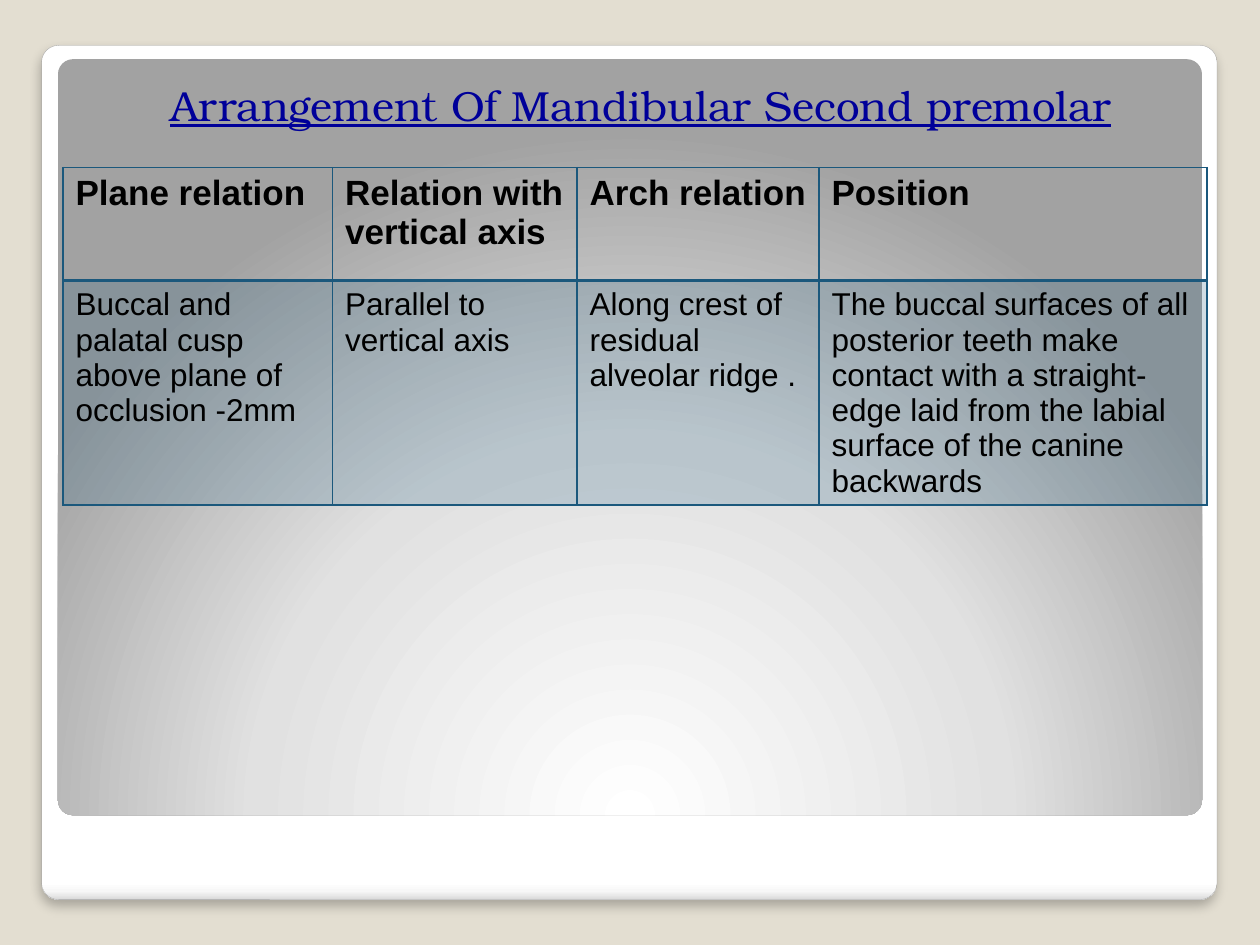
from dataclasses import dataclass

from lxml import etree
from pptx import Presentation
from pptx import util as u
from pptx.dml.color import RGBColor
from pptx.enum import shapes, text
from pptx.oxml.ns import nsdecls


@dataclass(frozen=True)
class Theme:
    backdrop: str = "E3DED1"
    outline: str = "A4A4A4"
    shadow: str = "000000"
    title: str = "000099"
    ink: str = "000000"
    accent: str = "1B587C"
    card: tuple = ((0, "FFFFFF"), (98, "FFFFFF"), (99, "F7F7F7"), (100, "DADADA"))
    panel: tuple = ((0, "FFFFFF"), (55, "E1E1E1"), (100, "A2A2A2"))
    title_font: str = "TeX Gyre Bonum"
    body_font: str = "Arial"
    title_size: int = 24
    head_size: int = 20
    body_size: int = 18


T = Theme()
WIDTH, HEIGHT = u.Inches(10), u.Inches(7.5)

# Boxes: left, top, width, height in percent of the slide
CARD = (3.3, 4.8, 93.3, 90.4)
PANEL = (4.6, 6.27, 90.8, 80)
TITLE = (6.7, -2.27, 88.3, 16.67)
TABLE = (5, 17.73, 90.8, 33.33)

# Shares of the table's width and height, in percent
COLUMNS = (23.57, 21.37, 21.15, 33.92)
ROWS = (36, 40.4)
CELLS = (
    ("Plane relation", "Relation with vertical axis", "Arch relation", "Position"),
    ("Buccal and palatal cusp above plane of occlusion -2mm",
     "Parallel to vertical axis",
     "Along crest of residual alveolar ridge .",
     "The buccal surfaces of all posterior teeth make contact with a "
     "straight-edge laid from the labial surface of the canine backwards"),
)

LINEAR = '<a:lin ang="5400000" scaled="0"/>'
RADIAL = ('<a:path path="circle"><a:fillToRect l="50000" t="175000" '
          'r="50000" b="-75000"/></a:path>')


def place(box):
    return [int(size * share / 100)
            for size, share in zip((WIDTH, HEIGHT) * 2, box)]


def xml(tag, content, attrs=""):
    return etree.fromstring(f'<a:{tag} {nsdecls("a")} {attrs}>{content}</a:{tag}>')


def style(run, font, size, color):
    run.font.name, run.font.size = font, u.Pt(size)
    run.font.color.rgb = RGBColor.from_string(color)


def add_rounded(s, box, stops, direction):
    sp = s.shapes.add_shape(shapes.MSO_SHAPE.ROUNDED_RECTANGLE, *place(box))
    sp.adjustments[0] = 0.02
    sp.shadow.inherit = False
    sp.line.fill.background()
    colors = "".join(f'<a:gs pos="{pos * 1000}"><a:srgbClr val="{c}"/></a:gs>'
                     for pos, c in stops)
    fill = xml("gradFill", f"<a:gsLst>{colors}</a:gsLst>{direction}",
               'rotWithShape="1"')
    sp.element.spPr.insert(2, fill)  # after position and geometry
    return sp


def add_card(s, box):
    sp = add_rounded(s, box, T.card, LINEAR)
    sp.line.color.rgb = RGBColor.from_string(T.outline)
    sp.line.width = u.Pt(0.16)
    effects = sp.element.spPr[-1]
    effects.append(xml(
        "outerShdw",
        f'<a:srgbClr val="{T.shadow}"><a:alpha val="25000"/></a:srgbClr>',
        f'blurRad="{u.Pt(6)}" dist="{u.Pt(4)}" dir="5400000" rotWithShape="0"'))


def add_title(s, box):
    tf = s.shapes.add_textbox(*place(box)).text_frame
    tf.word_wrap = True
    tf.vertical_anchor = text.MSO_ANCHOR.BOTTOM
    p = tf.paragraphs[0]
    p.text = "Arrangement Of Mandibular Second premolar"
    p.alignment = text.PP_ALIGN.CENTER
    r = p.runs[0]
    style(r, T.title_font, T.title_size, T.title)
    r.font.underline = True


def style_cell(cell, is_head):
    r = cell.text_frame.paragraphs[0].runs[0]
    style(r, T.body_font, T.head_size if is_head else T.body_size, T.ink)
    r.font.bold = is_head

    # Fill: none for the header, a light tint for the body
    if is_head:
        cell.fill.background()
    else:
        cell.fill.solid()
        cell.fill.fore_color.rgb = RGBColor.from_string(T.accent)
    tc_pr = cell._tc.get_or_add_tcPr()
    if not is_head:
        tc_pr[0][0].append(xml("alpha", "", 'val="20000"'))

    # Borders: a double-weight rule between header and body
    heavy = "lnB" if is_head else "lnT"
    for i, side in enumerate(("lnL", "lnR", "lnT", "lnB")):
        width = u.Pt(2 if side == heavy else 1)
        tc_pr.insert(i, xml(
            side, f'<a:solidFill><a:srgbClr val="{T.accent}"/></a:solidFill>',
            f'w="{width}"'))


def add_relations(s, box):
    x, y, w, h = place(box)
    frame = s.shapes.add_table(len(ROWS), len(COLUMNS), x, y, w, h)
    table = frame.table
    table.first_row = table.horz_banding = False
    for column, share in zip(table.columns, COLUMNS):
        column.width = int(w * share / 100)
    for row, share, words in zip(table.rows, ROWS, CELLS):
        row.height = int(h * share / 100)
        for cell, label in zip(row.cells, words):
            cell.text_frame.text = label
            style_cell(cell, words is CELLS[0])
    frame.height = h


def main():
    prs = Presentation()
    prs.slide_width, prs.slide_height = WIDTH, HEIGHT
    s = prs.slides.add_slide(prs.slide_layouts[6])
    s.background.fill.solid()
    s.background.fill.fore_color.rgb = RGBColor.from_string(T.backdrop)
    add_card(s, CARD)
    add_rounded(s, PANEL, T.panel, RADIAL)
    add_relations(s, TABLE)
    add_title(s, TITLE)
    prs.save("out.pptx")


if __name__ == "__main__":
    main()
